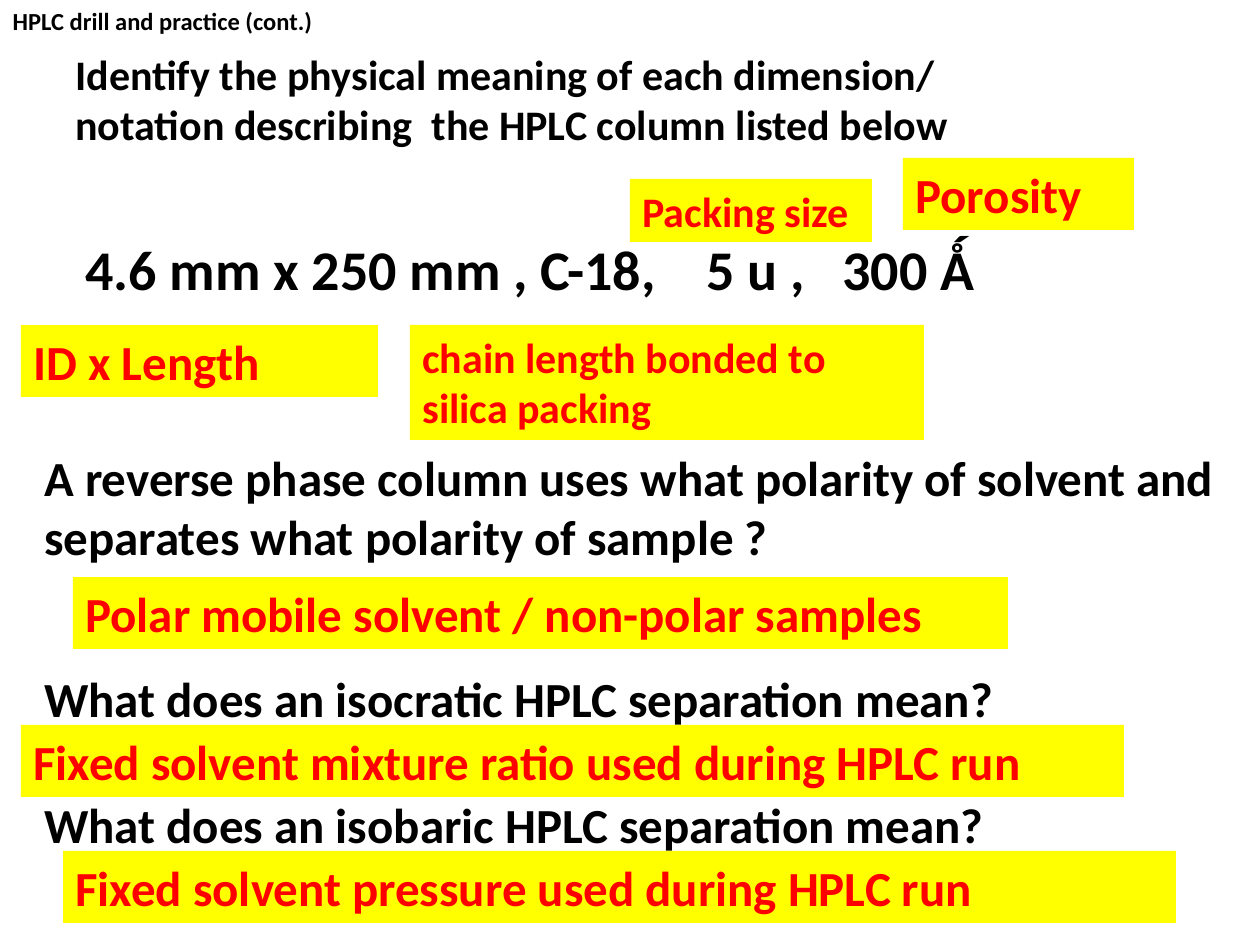
from lxml import etree
from pptx import Presentation
from pptx import util as u
from pptx.dml.color import RGBColor
from pptx.enum import shapes, text
from pptx.oxml.ns import qn

PX_PER_INCH = 126
BLACK, RED, YELLOW = "000000", "FF0000", "FFFF00"

# Content: (wording, size in points, (left, top, width, height) in px)
HEADING = ("HPLC drill and practice (cont.)", 14, (0, 0, 735, 43))
COLUMN = ("4.6 mm x 250 mm , C-18,\t5 u ,\t300 Ǻ", 32, (73, 221, 1040, 89))
COLUMN_TABS = [621, 757]
QUESTIONS = [
    ("Identify the physical meaning of each dimension/ notation describing  the HPLC column listed below",
     24, (63, 42, 914, 115)),
    ("A reverse phase column uses what polarity of solvent and separates what polarity of sample ?",
     28, (32, 441, 1228, 131)),
    ("What does an isocratic HPLC separation mean?", 28, (32, 662, 998, 72)),
    ("What does an isobaric HPLC separation mean?", 28, (32, 788, 998, 72)),
]
ANSWERS = [
    ("ID x Length", 28, (21, 325, 357, 72)),
    ("chain length bonded to silica packing", 24, (410, 325, 514, 115)),
    ("Packing size", 24, (630, 179, 242, 63)),
    ("Porosity", 28, (903, 158, 231, 72)),
    ("Polar mobile solvent / non-polar samples", 28, (73, 577, 935, 72)),
    ("Fixed solvent mixture ratio used during HPLC run", 28, (21, 725, 1103, 72)),
    ("Fixed solvent pressure used during HPLC run", 28, (63, 851, 1113, 72)),
]


def px(length):
    return u.Emu(round(length * 914400 / PX_PER_INCH))


def color(hex_string):
    return RGBColor.from_string(hex_string)


def write(shape, wording, size, ink):
    frame = shape.text_frame
    frame.word_wrap = True
    frame.auto_size = text.MSO_AUTO_SIZE.NONE
    frame.vertical_anchor = text.MSO_ANCHOR.TOP
    line = frame.paragraphs[0]
    line.text = wording
    line.alignment = text.PP_ALIGN.LEFT
    line.font.name = "Calibri"
    line.font.size = u.Pt(size)
    line.font.bold = True
    line.font.color.rgb = color(ink)
    return line


def add_text(wording, size, box):
    return write(slide.shapes.add_textbox(*map(px, box)), wording, size, BLACK)


def add_answer(wording, size, box):
    label = slide.shapes.add_shape(shapes.MSO_SHAPE.RECTANGLE, *map(px, box))
    label.shadow.inherit = False
    label.fill.solid()
    label.fill.fore_color.rgb = color(YELLOW)
    label.line.fill.background()
    write(label, wording, size, RED)


prs = Presentation()
prs.slide_width, prs.slide_height = u.Inches(10), u.Inches(7.5)
slide = prs.slides.add_slide(prs.slide_layouts[5])

# Heading
wording, size, box = HEADING
heading = slide.shapes.title
heading.left, heading.top, heading.width, heading.height = map(px, box)
write(heading, wording, size, BLACK)

# Column description, its parts set apart by tab stops
column = add_text(*COLUMN)
tabs = etree.Element(qn("a:tabLst"))
for stop in COLUMN_TABS:
    etree.SubElement(tabs, qn("a:tab"), pos=str(px(stop)), algn="l")
column._p.get_or_add_pPr().insert(0, tabs)
tail = column.add_run()
tail.text = " "
tail.font.size, tail.font.bold = u.Pt(36), False

# Questions, then the highlighted answers over them
for question in QUESTIONS:
    add_text(*question)
for answer in ANSWERS:
    add_answer(*answer)

prs.save("out.pptx")
